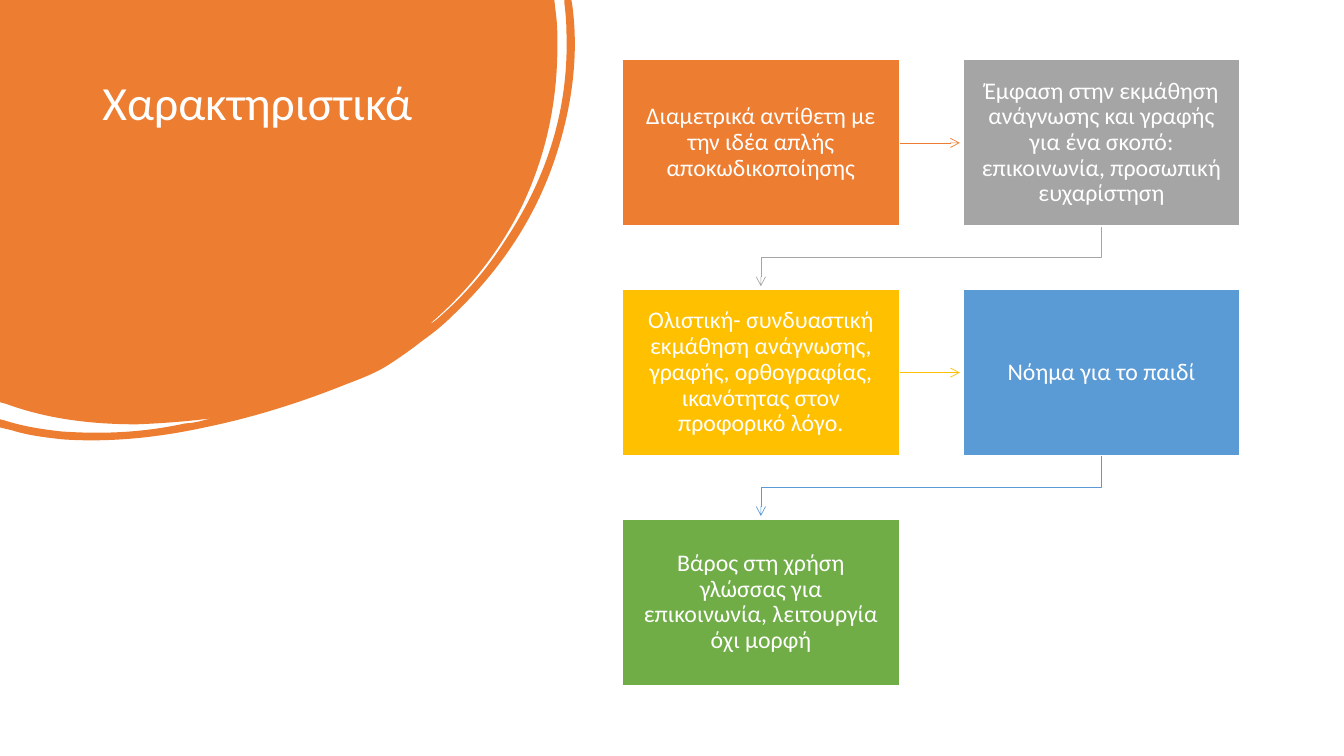
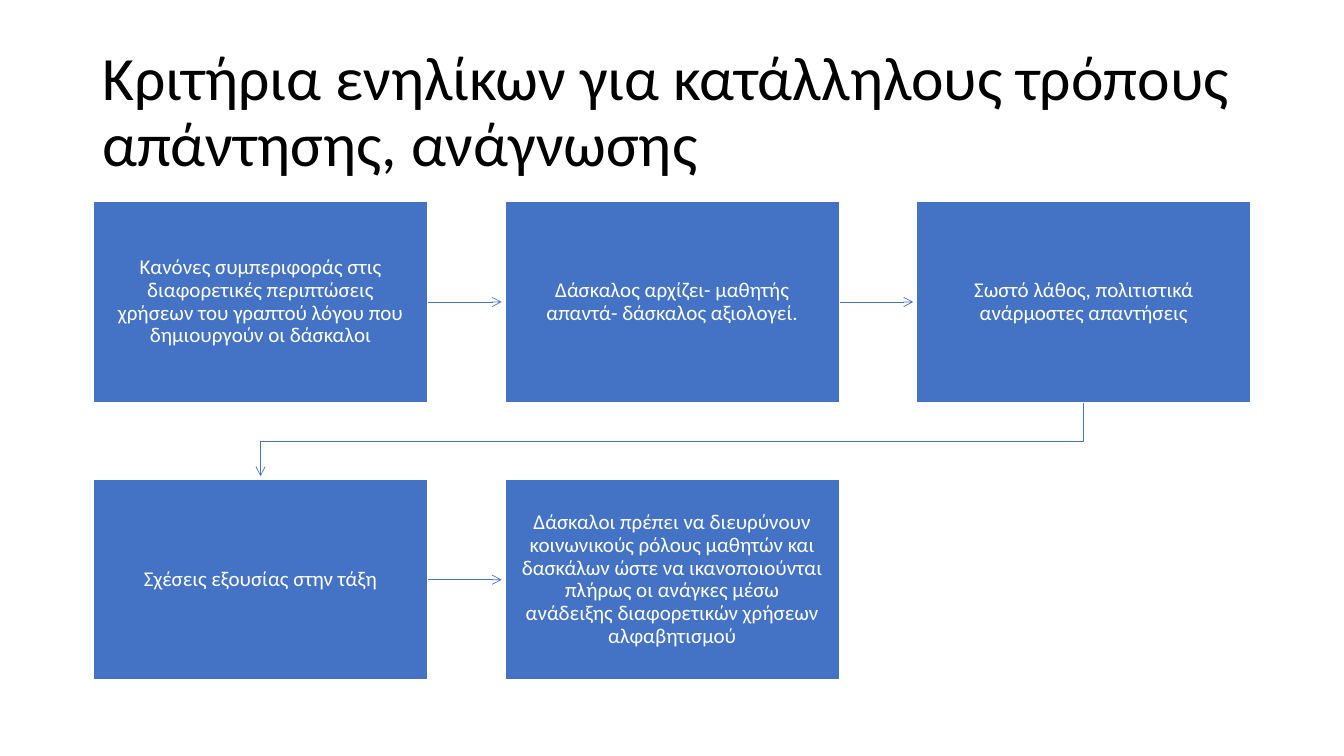
from lxml import etree
from pptx import Presentation
from pptx.dml.color import RGBColor
from pptx.enum.shapes import MSO_CONNECTOR, MSO_SHAPE
from pptx.enum.text import MSO_ANCHOR, MSO_AUTO_SIZE, PP_ALIGN
from pptx.oxml.ns import qn
from pptx.util import Pt

STRAIGHT = MSO_CONNECTOR.STRAIGHT
RECTANGLE = MSO_SHAPE.RECTANGLE
TOP, MIDDLE = MSO_ANCHOR.TOP, MSO_ANCHOR.MIDDLE
LEFT, CENTER = PP_ALIGN.LEFT, PP_ALIGN.CENTER
NO_AUTOFIT = MSO_AUTO_SIZE.NONE

FONT = "Calibri"
LINE_SPACING = 0.9
WHITE, BLACK = "FFFFFF", "000000"
ORANGE, GRAY, GOLD = "ED7D31", "A5A5A5", "FFC000"
SKY, GREEN, BLUE = "5B9BD5", "70AD47", "4472C4"
ARROW_GAP = 2.3

# Each slide: title, then a flow of boxes read row by row; lengths in points
SLIDES = [
    {
        "title": "Χαρακτηριστικά",
        "title_box": (66, 53.3, 253.4, 159.8),
        "title_format": {"size": 34, "color": WHITE, "anchor": TOP},
        "blob": True,
        "flow": {"left": 444.6, "top": 42.7, "width": 197.8, "height": 118.7,
                 "step_x": 243.3, "step_y": 164.1, "columns": 2,
                 "size": 17, "inset": (9.4, 10.1)},
        "steps": [
            ("Διαμετρικά αντίθετη με την ιδέα απλής αποκωδικοποίησης", ORANGE),
            ("Έμφαση στην εκμάθηση ανάγνωσης και γραφής για ένα σκοπό: "
             "επικοινωνία, προσωπική ευχαρίστηση", GRAY),
            ("Ολιστική- συνδυαστική εκμάθηση ανάγνωσης, γραφής, ορθογραφίας, "
             "ικανότητας στον προφορικό λόγο.", GOLD),
            ("Νόημα για το παιδί", SKY),
            ("Βάρος στη χρήση γλώσσας για επικοινωνία, λειτουργία όχι μορφή",
             GREEN),
        ],
    },
    {
        "title": "Κριτήρια ενηλίκων για κατάλληλους τρόπους απάντησης, "
                 "ανάγνωσης",
        "title_box": (66, 28.8, 828, 104.4),
        "title_format": {"size": 44, "color": BLACK, "anchor": MIDDLE},
        "blob": False,
        "flow": {"left": 66.6, "top": 144, "width": 239, "height": 143.4,
                 "step_x": 294, "step_y": 198.4, "columns": 3,
                 "size": 15, "inset": (11.5, 12.2)},
        "steps": [
            ("Κανόνες συμπεριφοράς στις διαφορετικές περιπτώσεις χρήσεων του "
             "γραπτού λόγου που δημιουργούν οι δάσκαλοι", BLUE),
            ("Δάσκαλος αρχίζει- μαθητής απαντά- δάσκαλος αξιολογεί.", BLUE),
            ("Σωστό λάθος, πολιτιστικά ανάρμοστες απαντήσεις", BLUE),
            ("Σχέσεις εξουσίας στην τάξη", BLUE),
            ("Δάσκαλοι πρέπει να διευρύνουν κοινωνικούς ρόλους μαθητών και "
             "δασκάλων ώστε να ικανοποιούνται πλήρως οι ανάγκες μέσω ανάδειξης "
             "διαφορετικών χρήσεων αλφαβητισμού", BLUE),
        ],
    },
]

# Blob outline from (0, 0): two numbers are a line, six are a cubic curve
BLOB = [
    (396, 0), (397.4, 12.2),
    (398.2, 18.7, 398.2, 25.9, 398.2, 32.4),
    (398.2, 72.7, 390.2, 110.9, 373, 146.9),
    (357.1, 179.3, 334.8, 207.4, 307.4, 231.1),
    (308.9, 231.1, 309.6, 229.7, 311, 229),
    (330.5, 212.4, 347, 193.7, 360.7, 172.1),
    (391, 126.7, 406.8, 77, 404.6, 21.6),
    (404.6, 15.1, 403.9, 8.6, 403.2, 2.2),
    (403.2, 0), (408.2, 0), (409, 5),
    (413.3, 38.9, 409, 73.4, 398.2, 108),
    (383.8, 154.1, 357.8, 193, 322.6, 226.1),
    (316.1, 232.6, 308.9, 238.3, 301.7, 243.4),
    (294.5, 249.1, 287.3, 254.2, 278.6, 259.9),
    (270, 265.7, 259.2, 270, 247.7, 274.3),
    (215.3, 287.3, 181.4, 298.1, 146.2, 305.3),
    (113, 312.5, 79.2, 316.1, 45.4, 313.9),
    (32.4, 312.5, 20.2, 311, 8.6, 307.4),
    (0, 305.3), (0, 299.5), (2.9, 300.2),
    (16.6, 304.6, 30.2, 306.7, 43.9, 308.2),
    (74.2, 310.3, 103, 308.9, 132.5, 302.4),
    (136.1, 302.4, 139, 301.7, 142.6, 301),
    (145.4, 300.2, 148.3, 299.5, 151.2, 298.8),
    (133.9, 301, 115.9, 302.4, 97.9, 303.1),
    (66.2, 303.1, 34.6, 299.5, 5, 288.7),
    (0, 287.3),
]


def rgb(color):
    return RGBColor.from_string(color)


def write(shape, text, *, size, color, anchor=MIDDLE, align=LEFT,
          inset=(7.2, 3.6)):
    frame = shape.text_frame
    frame.word_wrap = True
    frame.auto_size = NO_AUTOFIT
    frame.vertical_anchor = anchor
    frame.margin_left = frame.margin_right = Pt(inset[0])
    frame.margin_top = frame.margin_bottom = Pt(inset[1])
    paragraph = frame.paragraphs[0]
    paragraph.alignment = align
    paragraph.line_spacing = LINE_SPACING
    run = paragraph.add_run()
    run.text = text
    run.font.name = FONT
    run.font.size = Pt(size)
    run.font.color.rgb = rgb(color)


def paint(shape, fill):
    shape.shadow.inherit = False
    shape.fill.solid()
    shape.fill.fore_color.rgb = rgb(fill)


def outline(slide, points, closed):
    """Freeform through points given in points."""
    corners = [(Pt(x), Pt(y)) for x, y in points]
    builder = slide.shapes.build_freeform(*corners[0])
    builder.add_line_segments(corners[1:], close=closed)
    return builder.convert_to_shape()


def bend_curves(shape, segments):
    """Merge the three lines of each six-number segment into one curve."""
    lines = iter(list(shape._element.iter(qn("a:lnTo"))))
    for segment in segments:
        first = next(lines)
        if len(segment) == 6:
            first.tag = qn("a:cubicBezTo")
            for _ in range(2):
                control = next(lines)
                first.append(control[0])
                control.getparent().remove(control)


def add_blob(slide):
    points = [(0, 0)] + [segment[i:i + 2] for segment in BLOB
                         for i in range(0, len(segment), 2)]
    blob = outline(slide, points, True)
    bend_curves(blob, BLOB)
    paint(blob, ORANGE)
    blob.line.fill.background()
    slide.shapes._spTree.insert(2, blob._element)  # behind the title


def add_arrow(slide, points, color):
    """Straight arrow for two points, bent arrow for more."""
    if len(points) == 2:
        (x1, y1), (x2, y2) = points
        arrow = slide.shapes.add_connector(
            STRAIGHT, Pt(x1), Pt(y1), Pt(x2), Pt(y2))
    else:
        arrow = outline(slide, points, False)
        arrow.fill.background()
    arrow.line.color.rgb = rgb(color)
    arrow.line.width = Pt(0.5)
    properties = arrow._element.spPr
    etree.SubElement(properties.find(qn("a:ln")), qn("a:tailEnd"), type="arrow")
    etree.SubElement(properties, qn("a:effectLst"))


def add_flow(slide, steps, *, left, top, width, height, step_x, step_y,
             columns, size, inset):
    corners = [(left + i % columns * step_x, top + i // columns * step_y)
               for i in range(len(steps))]
    for i, ((text, color), (x, y)) in enumerate(zip(steps, corners)):
        if i + 1 < len(steps):
            next_x, next_y = corners[i + 1]
            if next_y == y:
                middle = y + height / 2
                route = [(x + width, middle), (next_x - ARROW_GAP, middle)]
            else:
                start_x, end_x = x + width / 2, next_x + width / 2
                bend = (y + height + next_y) / 2
                route = [(start_x, y + height), (start_x, bend),
                         (end_x, bend), (end_x, next_y - ARROW_GAP)]
            add_arrow(slide, route, color)
        box = slide.shapes.add_shape(
            RECTANGLE, Pt(x), Pt(y), Pt(width), Pt(height))
        paint(box, color)
        box.line.color.rgb = rgb(WHITE)
        box.line.width = Pt(1)
        write(box, text, size=size, color=WHITE, align=CENTER, inset=inset)


def add_title(slide, text, box, text_format):
    title = slide.shapes.title
    title.left, title.top, title.width, title.height = map(Pt, box)
    write(title, text, **text_format)


def main():
    deck = Presentation()
    deck.slide_width, deck.slide_height = Pt(960), Pt(540)
    title_only = deck.slide_layouts[5]
    for content in SLIDES:
        slide = deck.slides.add_slide(title_only)
        add_title(slide, content["title"], content["title_box"],
                  content["title_format"])
        if content["blob"]:
            add_blob(slide)
        add_flow(slide, content["steps"], **content["flow"])
    deck.save("out.pptx")


if __name__ == "__main__":
    main()
